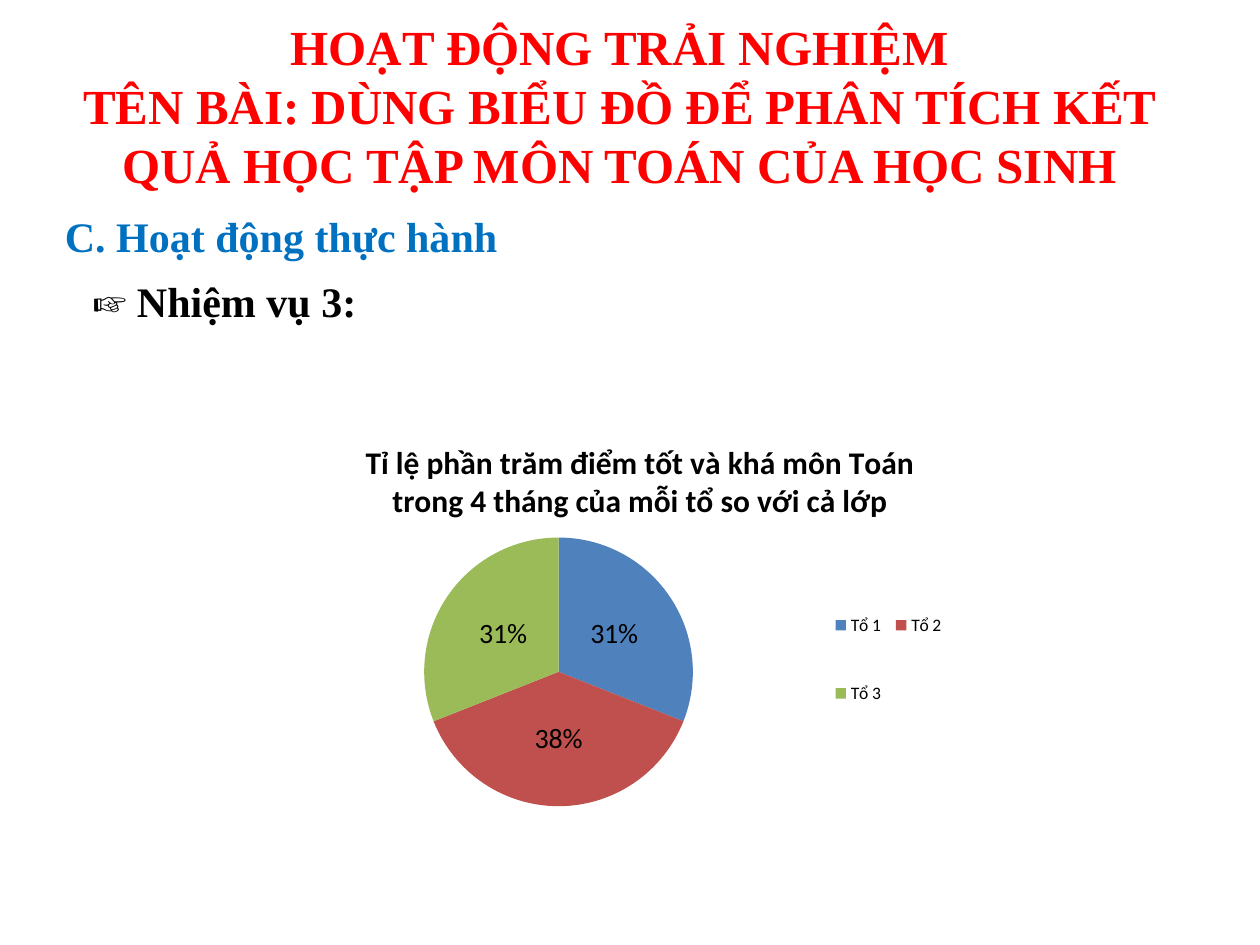
from lxml import etree
from pptx import Presentation
from pptx import util as u
from pptx.chart.data import CategoryChartData
from pptx.dml.color import RGBColor
from pptx.enum import chart as charts, text
from pptx.oxml.ns import qn

HEADING_FONT = "Times New Roman"
CHART_FONT = "Calibri"


def rgb(value):
    return RGBColor.from_string(value)


def set_font(font, size, name, color="000000", bold=False):
    font.size = u.Pt(size)
    font.name = name
    font.bold = bold
    font.color.rgb = rgb(color)


def write(frame, *lines, size=24, name=HEADING_FONT, color="000000", bold=True,
          align=text.PP_ALIGN.LEFT):
    for number, line in enumerate(lines):
        paragraph = frame.add_paragraph() if number else frame.paragraphs[0]
        paragraph.alignment = align
        run = paragraph.add_run()
        run.text = line
        set_font(run.font, size, name, color, bold)


def place(layout, **fractions):
    for child in list(layout):
        layout.remove(child)
    manual = etree.SubElement(layout, qn("c:manualLayout"))
    if "target" in fractions:
        etree.SubElement(manual, qn("c:layoutTarget")).set("val", fractions.pop("target"))
    for axis in "xy":
        etree.SubElement(manual, qn(f"c:{axis}Mode")).set("val", "edge")
    for key, value in fractions.items():
        etree.SubElement(manual, qn(f"c:{key}")).set("val", str(value))


def layout_of(parent, before):
    layout = parent.find(qn("c:layout"))
    if layout is None:
        layout = etree.Element(qn("c:layout"))
        parent.find(qn(before)).addprevious(layout)
    return layout


class Lesson:
    def __init__(self, width, height):
        self.deck = Presentation()
        self.deck.slide_width = u.Pt(width)
        self.deck.slide_height = u.Pt(height)
        self.slide = self.deck.slides.add_slide(self.deck.slide_layouts[6])

    def heading(self, box, *lines, **style):
        frame = self.slide.shapes.add_textbox(*map(u.Pt, box)).text_frame
        frame.word_wrap = True
        frame.auto_size = text.MSO_AUTO_SIZE.SHAPE_TO_FIT_TEXT
        write(frame, *lines, **style)

    def pie(self, box, title, shares, colors):
        data = CategoryChartData(number_format="General")
        data.categories = list(shares)
        data.add_series(title, list(shares.values()))
        chart = self.slide.shapes.add_chart(
            charts.XL_CHART_TYPE.PIE, *map(u.Pt, box), data).chart
        set_font(chart.font, 10, CHART_FONT)

        chart.has_title = True
        write(chart.chart_title.text_frame, title, size=18, name=CHART_FONT,
              align=text.PP_ALIGN.CENTER)
        chart.chart_title.include_in_layout = False

        chart.has_legend = True
        chart.legend.position = charts.XL_LEGEND_POSITION.RIGHT
        chart.legend.include_in_layout = True

        plot = chart.plots[0]
        plot.vary_by_categories = True
        plot.has_data_labels = True
        labels = plot.data_labels
        labels.show_percentage = True
        labels.show_value = False
        labels.number_format = "0%"
        labels.number_format_is_linked = False
        labels.position = charts.XL_LABEL_POSITION.CENTER
        set_font(labels.font, 16, CHART_FONT)
        for number, color in enumerate(colors):
            fill = plot.series[0].points[number].format.fill
            fill.solid()
            fill.fore_color.rgb = rgb(color)

        area = chart.element.find(qn("c:chart")).find(qn("c:plotArea"))
        place(layout_of(area, "c:pieChart"), target="inner",
              x=0.22, y=0.28, w=0.35, h=0.64)
        place(layout_of(chart.legend.element if hasattr(chart.legend, "element")
                        else area.getparent().find(qn("c:legend")), "c:overlay"),
              x=0.74, y=0.35, w=0.16, h=0.44)


def main():
    lesson = Lesson(720, 540)
    lesson.heading(
        (30, 6, 648, 109),
        "HOẠT ĐỘNG TRẢI NGHIỆM",
        "TÊN BÀI: DÙNG BIỂU ĐỒ ĐỂ PHÂN TÍCH KẾT QUẢ HỌC TẬP MÔN TOÁN CỦA HỌC SINH",
        size=28, color="FF0000", align=text.PP_ALIGN.CENTER)
    lesson.heading((30, 117, 492, 36), "C. Hoạt động thực hành", color="0070C0")
    lesson.heading((46, 154, 258, 36), "☞ Nhiệm vụ 3:")
    lesson.pie(
        (144, 240, 443.5, 240),
        "Tỉ lệ phần trăm điểm tốt và khá môn Toán trong 4 tháng của mỗi tổ so với cả lớp",
        {"Tổ 1": 31, "Tổ 2": 38, "Tổ 3": 31},
        ("4F81BD", "C0504D", "9BBB59"))
    lesson.deck.save("out.pptx")


if __name__ == "__main__":
    main()
